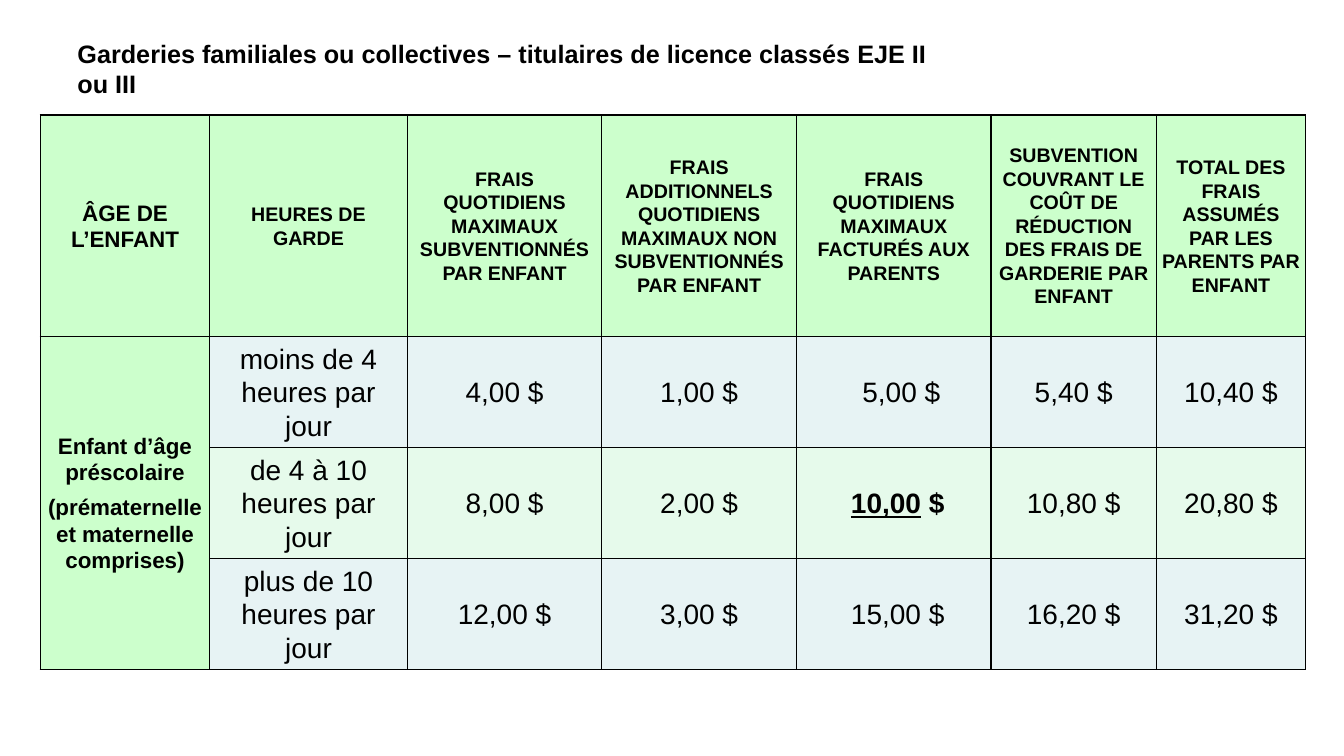
"""Build the slide of daily child care fees by hours of care."""
from dataclasses import dataclass

import lxml.etree
import pptx
import pptx.dml.color
import pptx.enum.text
import pptx.oxml.ns
import pptx.util

Inches = pptx.util.Inches
Pt = pptx.util.Pt
RGB = pptx.dml.color.RGBColor
MIDDLE = pptx.enum.text.MSO_ANCHOR.MIDDLE
CENTER = pptx.enum.text.PP_ALIGN.CENTER


@dataclass(frozen=True)
class Theme:
    font: str = "Arial"
    ink: str = "000000"
    header: str = "CCFFCC"
    blue: str = "E7F3F4"
    green: str = "E6FAEB"
    title_size: int = 18
    age_size: int = 16
    header_size: int = 14
    body_size: int = 20
    border: float = 1
    line_spacing: float = 1.07
    paragraph_gap: int = 6
    margin: float = 0.05


@dataclass(frozen=True)
class CellStyle:
    fill: str
    size: int
    bold: bool = False


@dataclass(frozen=True)
class FeeRow:
    fill: str
    hours: str
    fees: tuple[str, ...]
    billed_indent: float


THEME = Theme()
AGE_STYLE = CellStyle(THEME.header, THEME.age_size, True)
HEADER_STYLE = CellStyle(THEME.header, THEME.header_size, True)
COLUMN_WIDTHS = (1.68, 1.96, 1.93, 1.93, 1.93, 1.64, 1.48)
ROW_HEIGHTS = (2.2, 1.1, 1.1, 1.1)
BILLED_COLUMN = 4
TITLE = "Garderies familiales ou collectives – titulaires de licence classés EJE II ou III"
AGE_HEADER = "ÂGE DE L’ENFANT"
HEADERS = (
    "HEURES DE GARDE",
    "FRAIS QUOTIDIENS MAXIMAUX SUBVENTIONNÉS PAR ENFANT",
    "FRAIS ADDITIONNELS QUOTIDIENS MAXIMAUX NON SUBVENTIONNÉS PAR ENFANT",
    "FRAIS QUOTIDIENS MAXIMAUX FACTURÉS AUX PARENTS",
    "SUBVENTION COUVRANT LE COÛT DE RÉDUCTION DES FRAIS DE GARDERIE PAR ENFANT",
    "TOTAL DES FRAIS ASSUMÉS PAR LES PARENTS PAR ENFANT",
)
AGE_GROUP = "Enfant d’âge\npréscolaire\n(prématernelle et maternelle comprises)"
FEE_ROWS = (
    FeeRow(THEME.blue, "moins de 4 heures par jour",
           ("4,00 $", "1,00 $", "5,00 $", "5,40 $", "10,40 $"), 0.15),
    FeeRow(THEME.green, "de 4 à 10 heures par jour",
           ("8,00 $", "2,00 $", "10,00 $", "10,80 $", "20,80 $"), 0.08),
    FeeRow(THEME.blue, "plus de 10 heures par jour",
           ("12,00 $", "3,00 $", "15,00 $", "16,20 $", "31,20 $"), 0.08),
)


def format_run(r: pptx.text.text._Run, size: int, bold: bool) -> None:
    """Apply the theme font to a run."""
    r.font.name = THEME.font
    r.font.size = Pt(size)
    r.font.bold = bold
    r.font.color.rgb = RGB.from_string(THEME.ink)


def add_borders(cell: pptx.table._Cell) -> None:
    """Draw a solid line on the four sides of a cell."""
    qn = pptx.oxml.ns.qn
    tc_pr = cell._tc.get_or_add_tcPr()
    for side in ("lnL", "lnR", "lnT", "lnB"):
        ln = lxml.etree.SubElement(tc_pr, qn(f"a:{side}"), w=str(Pt(THEME.border)))
        fill = lxml.etree.SubElement(ln, qn("a:solidFill"))
        lxml.etree.SubElement(fill, qn("a:srgbClr"), val=THEME.ink)


def fill_cell(cell: pptx.table._Cell, text: str, style: CellStyle) -> None:
    """Write centred text in a filled cell."""
    cell.fill.solid()
    cell.fill.fore_color.rgb = RGB.from_string(style.fill)
    cell.vertical_anchor = MIDDLE
    cell.margin_left = cell.margin_right = Inches(THEME.margin)
    cell.margin_top = cell.margin_bottom = 0
    cell.text_frame.text = text
    for p in cell.text_frame.paragraphs:
        p.alignment = CENTER
        p.line_spacing = THEME.line_spacing
        for r in p.runs:
            format_run(r, style.size, style.bold)


def emphasize_amount(cell: pptx.table._Cell) -> None:
    """Make an amount bold and underline its digits."""
    p = cell.text_frame.paragraphs[0]
    digits = p.runs[0]
    amount = digits.text
    digits.text = amount[:-2]
    currency = p.add_run()
    currency.text = amount[-2:]
    for r in p.runs:
        format_run(r, THEME.body_size, True)
    digits.font.underline = True


def add_title(s: pptx.slide.Slide) -> None:
    """Add the slide title."""
    tf = s.shapes.add_textbox(Inches(0.67), Inches(0.33), Inches(8.78), Inches(0.93)).text_frame
    tf.word_wrap = True
    tf.text = TITLE
    format_run(tf.paragraphs[0].runs[0], THEME.title_size, True)


def add_fee_table(s: pptx.slide.Slide) -> None:
    """Add the table of fees."""
    table = s.shapes.add_table(
        len(ROW_HEIGHTS), len(COLUMN_WIDTHS), Inches(0.4), Inches(1.14),
        Inches(sum(COLUMN_WIDTHS)), Inches(sum(ROW_HEIGHTS))).table
    for column, width in zip(table.columns, COLUMN_WIDTHS):
        column.width = Inches(width)
    for row, height in zip(table.rows, ROW_HEIGHTS):
        row.height = Inches(height)
    for cell in table.iter_cells():
        add_borders(cell)

    fill_cell(table.cell(0, 0), AGE_HEADER, AGE_STYLE)
    for j, header in enumerate(HEADERS, 1):
        fill_cell(table.cell(0, j), header, HEADER_STYLE)

    age_cell = table.cell(1, 0)
    age_cell.merge(table.cell(len(FEE_ROWS), 0))
    fill_cell(age_cell, AGE_GROUP, AGE_STYLE)
    age_cell.text_frame.paragraphs[1].space_after = Pt(THEME.paragraph_gap)

    for i, row in enumerate(FEE_ROWS, 1):
        for j, text in enumerate((row.hours, *row.fees), 1):
            fill_cell(table.cell(i, j), text, CellStyle(row.fill, THEME.body_size))
        table.cell(i, BILLED_COLUMN).margin_left = Inches(THEME.margin + row.billed_indent)
    emphasize_amount(table.cell(2, BILLED_COLUMN))


def main() -> None:
    """Create and save the presentation."""
    prs = pptx.Presentation()
    prs.slide_width, prs.slide_height = Inches(13.33), Inches(7.5)
    s = prs.slides.add_slide(prs.slide_layouts[6])
    add_title(s)
    add_fee_table(s)
    prs.save("out.pptx")


if __name__ == "__main__":
    main()
